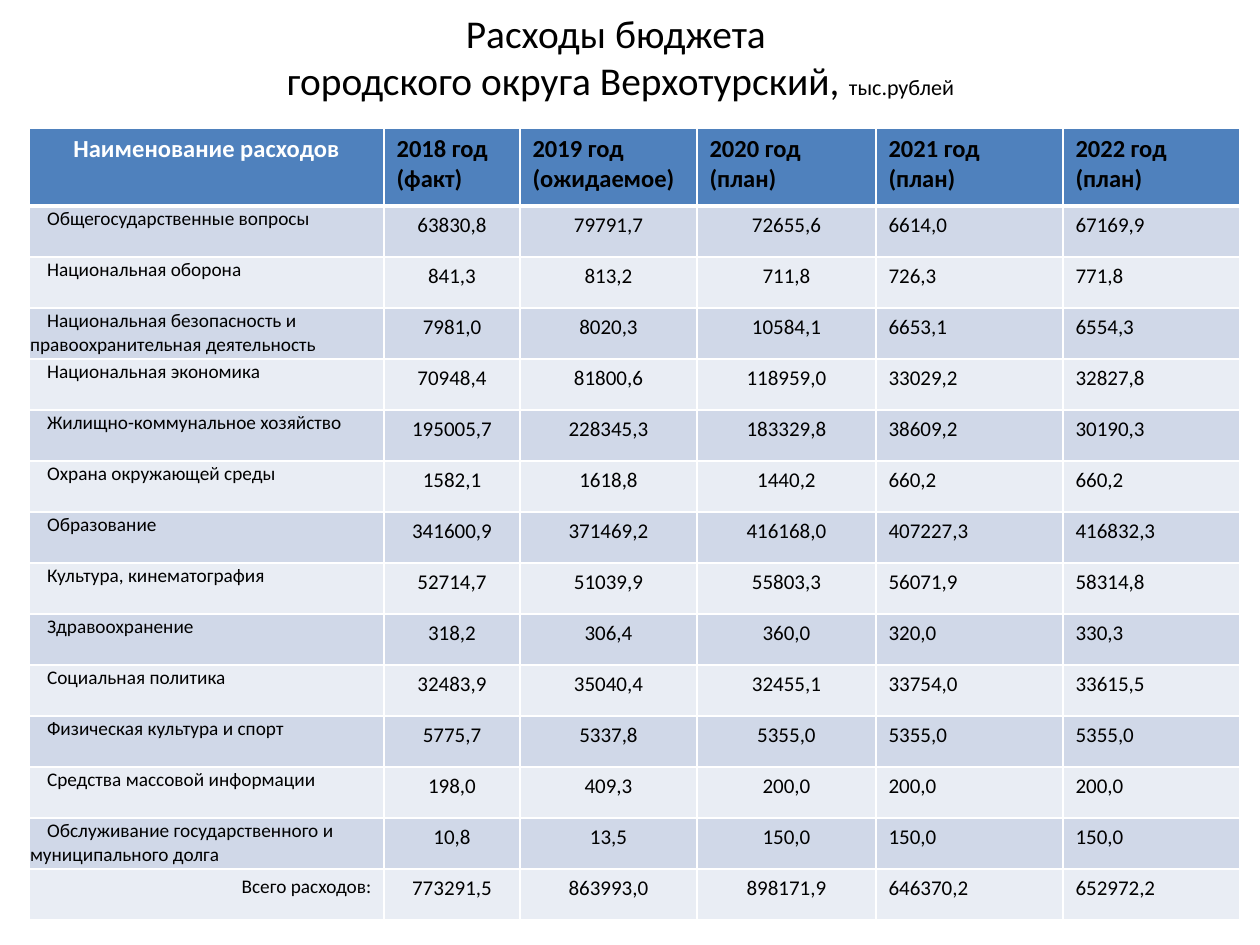
from dataclasses import dataclass

import pptx
import pptx.dml.color
import pptx.enum.text
import pptx.oxml
import pptx.oxml.ns
import pptx.util

PX_PER_INCH = 126
FONT = "Calibri"
COLORS = {
    "header": "4F81BD",
    "odd": "D0D8E8",
    "even": "E9EDF4",
    "grid": "FFFFFF",
    "header_name": "FFFFFF",
    "text": "000000",
}
ALIGN = pptx.enum.text.PP_ALIGN
COLUMN_WIDTHS = [355, 136, 177, 179, 187, 177]
YEAR_ALIGNS = [ALIGN.CENTER] * 3 + [ALIGN.LEFT] * 2
HEADER_HEIGHT = 78
ROW_HEIGHT = 51
NAME_INDENT = 17


@dataclass
class Expense:
    name: str
    amounts: list[str]


@dataclass
class CellStyle:
    fill: str
    size: float
    align: pptx.enum.text.PP_ALIGN = ALIGN.LEFT
    color: str = "text"
    bold: bool = False
    top_line: float = 1
    bottom_line: float = 1
    indented: bool = False


YEARS = ["2018 год (факт)", "2019 год (ожидаемое)", "2020 год (план)", "2021 год (план)", "2022 год (план)"]
EXPENSES = [
    Expense("Общегосударственные вопросы", ["63830,8", "79791,7", "72655,6", "6614,0", "67169,9"]),
    Expense("Национальная оборона", ["841,3", "813,2", "711,8", "726,3", "771,8"]),
    Expense("Национальная безопасность и правоохранительная деятельность",
            ["7981,0", "8020,3", "10584,1", "6653,1", "6554,3"]),
    Expense("Национальная экономика", ["70948,4", "81800,6", "118959,0", "33029,2", "32827,8"]),
    Expense("Жилищно-коммунальное хозяйство", ["195005,7", "228345,3", "183329,8", "38609,2", "30190,3"]),
    Expense("Охрана окружающей среды", ["1582,1", "1618,8", "1440,2", "660,2", "660,2"]),
    Expense("Образование", ["341600,9", "371469,2", "416168,0", "407227,3", "416832,3"]),
    Expense("Культура, кинематография", ["52714,7", "51039,9", "55803,3", "56071,9", "58314,8"]),
    Expense("Здравоохранение", ["318,2", "306,4", "360,0", "320,0", "330,3"]),
    Expense("Социальная политика", ["32483,9", "35040,4", "32455,1", "33754,0", "33615,5"]),
    Expense("Физическая культура и спорт", ["5775,7", "5337,8", "5355,0", "5355,0", "5355,0"]),
    Expense("Средства массовой информации", ["198,0", "409,3", "200,0", "200,0", "200,0"]),
    Expense("Обслуживание государственного и муниципального долга",
            ["10,8", "13,5", "150,0", "150,0", "150,0"]),
]
TOTAL = Expense("Всего расходов:", ["773291,5", "863993,0", "898171,9", "646370,2", "652972,2"])


def px(length: int) -> pptx.util.Emu:
    return pptx.util.Emu(round(length * 914400 / PX_PER_INCH))


def rgb(name: str) -> pptx.dml.color.RGBColor:
    return pptx.dml.color.RGBColor.from_string(COLORS[name])


def add_run(paragraph, text: str, size: float, color: str = "text", bold: bool = False) -> None:
    run = paragraph.add_run()
    run.text = text
    run.font.name = FONT
    run.font.size = pptx.util.Pt(size)
    run.font.bold = bold
    run.font.color.rgb = rgb(color)


def add_border(cell, side: str, width: float) -> None:
    border = pptx.oxml.parse_xml(
        f'<a:{side} {pptx.oxml.ns.nsdecls("a")} w="{pptx.util.Pt(width)}">'
        f'<a:solidFill><a:srgbClr val="{COLORS["grid"]}"/></a:solidFill></a:{side}>'
    )
    cell._tc.get_or_add_tcPr().append(border)


def fill_cell(cell, text: str, style: CellStyle) -> None:
    widths = {"lnL": 1, "lnR": 1, "lnT": style.top_line, "lnB": style.bottom_line}
    for side, width in widths.items():
        add_border(cell, side, width)
    cell.fill.solid()
    cell.fill.fore_color.rgb = rgb(style.fill)
    paragraph = cell.text_frame.paragraphs[0]
    paragraph.alignment = style.align
    if style.indented:
        cell.margin_left = cell.margin_right = cell.margin_top = px(1)
        cell.margin_bottom = 0
        properties = paragraph._p.get_or_add_pPr()
        properties.set("marL", "0")
        properties.set("indent", str(px(NAME_INDENT)))
    add_run(paragraph, text, style.size, style.color, style.bold)


def add_title(slide) -> None:
    title = slide.shapes.title
    title.left, title.top, title.width, title.height = px(20), px(0), px(1201), px(113)
    frame = title.text_frame
    frame.word_wrap = True
    frame.auto_size = pptx.enum.text.MSO_AUTO_SIZE.NONE
    frame.vertical_anchor = pptx.enum.text.MSO_ANCHOR.MIDDLE
    heading = frame.paragraphs[0]
    heading.alignment = ALIGN.CENTER
    add_run(heading, "Расходы бюджета ", 22.5)
    heading.add_line_break()
    add_run(heading, "городского округа Верхотурский, ", 22.5)
    add_run(heading, "тыс.рублей", 12.6)


def add_budget(slide) -> None:
    row_heights = [HEADER_HEIGHT] + [ROW_HEIGHT] * (len(EXPENSES) + 1)
    budget = slide.shapes.add_table(
        len(row_heights), len(COLUMN_WIDTHS), px(29), px(128), px(sum(COLUMN_WIDTHS)), px(sum(row_heights))
    ).table
    for column, width in zip(budget.columns, COLUMN_WIDTHS):
        column.width = px(width)
    for row, height in zip(budget.rows, row_heights):
        row.height = px(height)

    fill_cell(budget.cell(0, 0), "Наименование расходов",
              CellStyle("header", 14, ALIGN.CENTER, "header_name", True, bottom_line=3))
    for column, year in enumerate(YEARS, 1):
        fill_cell(budget.cell(0, column), year, CellStyle("header", 14, bold=True, bottom_line=3))

    for row, expense in enumerate(EXPENSES + [TOTAL], 1):
        band = "odd" if row % 2 else "even"
        top_line = 3 if row == 1 else 1
        is_total = expense is TOTAL
        name_align = ALIGN.RIGHT if is_total else ALIGN.LEFT
        fill_cell(budget.cell(row, 0), expense.name,
                  CellStyle(band, 11, name_align, top_line=top_line, indented=not is_total))
        for column, (amount, align) in enumerate(zip(expense.amounts, YEAR_ALIGNS), 1):
            fill_cell(budget.cell(row, column), amount, CellStyle(band, 12, align, top_line=top_line))


def main() -> None:
    presentation = pptx.Presentation()
    presentation.slide_width = px(1260)
    presentation.slide_height = px(945)
    slide = presentation.slides.add_slide(presentation.slide_layouts[5])
    add_title(slide)
    add_budget(slide)
    presentation.save("out.pptx")


if __name__ == "__main__":
    main()
